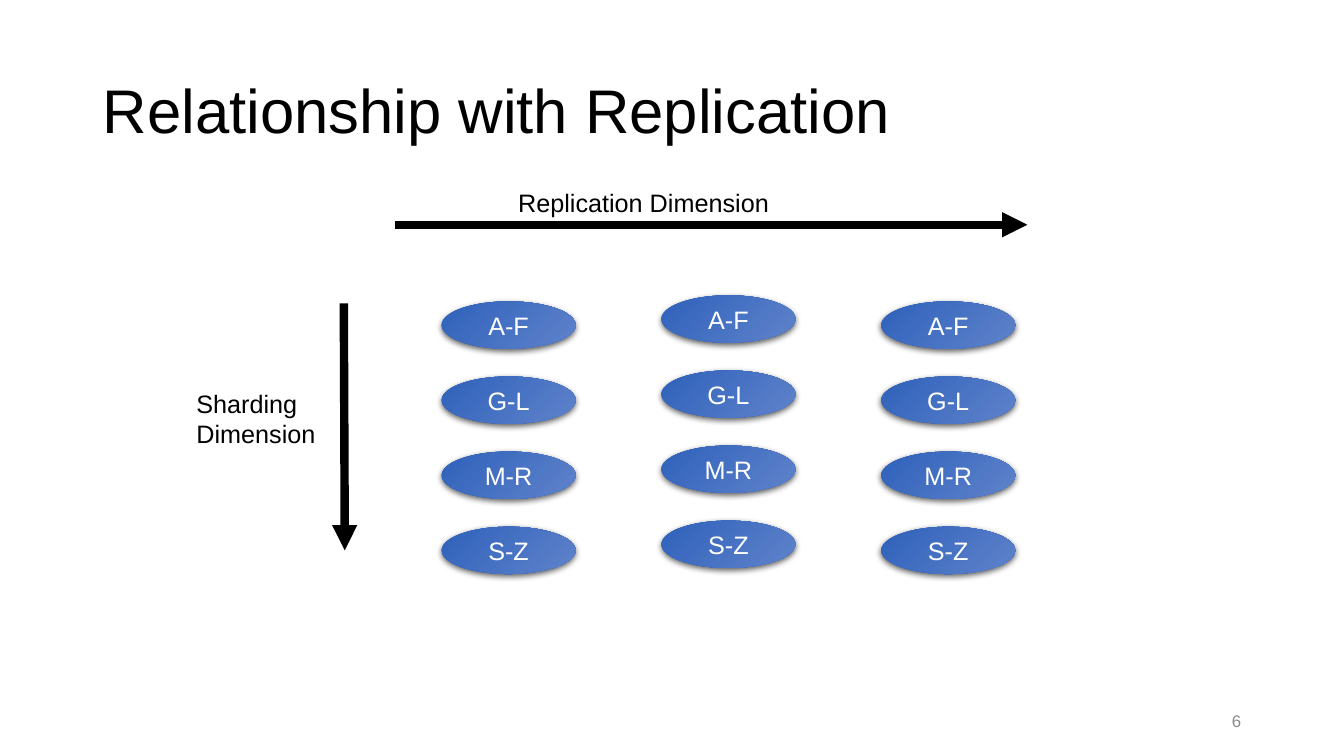
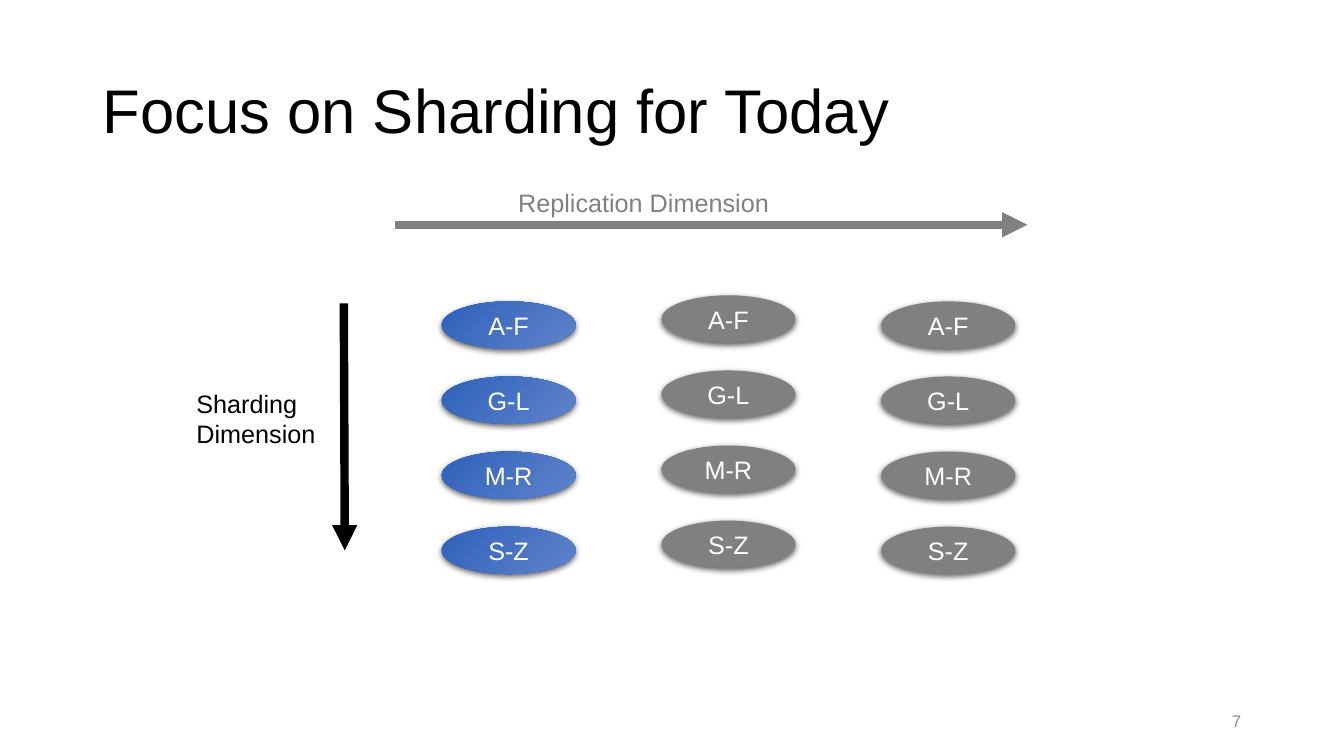
import dataclasses

import lxml.etree
import pptx
import pptx.dml.color
import pptx.enum.shapes
import pptx.enum.text
import pptx.oxml.ns
import pptx.util

SLIDE_WIDTH, SLIDE_HEIGHT = 13.33, 7.5
FONT = "Arial"
COLORS = {
    "ink": "000000",
    "paper": "FFFFFF",
    "muted": "808080",
    "page": "8C8C8C",
    "blue_dark": "2E61BA",
    "blue_light": "6083CB",
}

KEY_RANGES = ("A-F", "G-L", "M-R", "S-Z")
REPLICA_COUNT = 3
GRID_LEFT, GRID_TOP = 4.38, 2.99
COLUMN_STEP, ROW_STEP = 2.18, 0.745
SHARD_WIDTH, SHARD_HEIGHT = 1.33, 0.47
MIDDLE_LIFT = 0.06

ALIGN = pptx.enum.text.PP_ALIGN
ANCHOR = pptx.enum.text.MSO_ANCHOR


@dataclasses.dataclass(frozen=True)
class Box:
    left: float
    top: float
    width: float
    height: float

    def emu(self) -> tuple:
        return tuple(map(pptx.util.Inches, dataclasses.astuple(self)))


@dataclasses.dataclass(frozen=True)
class TextStyle:
    size: int
    align: ALIGN = ALIGN.LEFT
    anchor: ANCHOR = ANCHOR.TOP
    wrap: bool = True
    line_spacing: float = 1.0


@dataclasses.dataclass(frozen=True)
class ShardingSlide:
    title: str
    page: int
    replication_muted: bool


TITLE = TextStyle(44, anchor=ANCHOR.MIDDLE, line_spacing=0.9)
LABEL = TextStyle(18, wrap=False)
SHARD = TextStyle(18, ALIGN.CENTER, ANCHOR.MIDDLE)
PAGE = TextStyle(12, ALIGN.RIGHT, ANCHOR.MIDDLE)

SLIDES = (
    ShardingSlide("Relationship with Replication", 6, replication_muted=False),
    ShardingSlide("Focus on Sharding for Today", 7, replication_muted=True),
)


def rgb(color: str) -> pptx.dml.color.RGBColor:
    return pptx.dml.color.RGBColor.from_string(COLORS[color])


def write(shape, text: str, style: TextStyle, color: str) -> None:
    frame = shape.text_frame
    frame.word_wrap = style.wrap
    frame.vertical_anchor = style.anchor
    paragraph = frame.paragraphs[0]
    paragraph.text = text
    paragraph.alignment = style.align
    paragraph.line_spacing = style.line_spacing
    paragraph.font.name = FONT
    paragraph.font.size = pptx.util.Pt(style.size)
    paragraph.font.color.rgb = rgb(color)


def add_text(slide, box: Box, text: str, style: TextStyle, color: str = "ink") -> None:
    write(slide.shapes.add_textbox(*box.emu()), text, style, color)


def add_xml(parent, tag: str, **attributes: str):
    return lxml.etree.SubElement(parent, pptx.oxml.ns.qn(tag), attributes)


def add_arrow(slide, start: tuple[float, float], end: tuple[float, float], color: str) -> None:
    arrow = slide.shapes.add_connector(
        pptx.enum.shapes.MSO_CONNECTOR.STRAIGHT, *map(pptx.util.Inches, start + end))
    arrow.line.width = pptx.util.Pt(6)
    arrow.line.color.rgb = rgb(color)
    add_xml(arrow.line._get_or_add_ln(), "a:tailEnd", type="triangle")
    add_xml(arrow._element.spPr, "a:effectLst")


def add_soft_shadow(shape) -> None:
    shape.shadow.inherit = False
    effects = shape._element.spPr.find(pptx.oxml.ns.qn("a:effectLst"))
    shadow = add_xml(effects, "a:outerShdw", blurRad=str(pptx.util.Pt(4.5)),
                     dist=str(pptx.util.Pt(1.5)), dir="5400000",
                     algn="ctr", rotWithShape="0")
    shadow_color = add_xml(shadow, "a:srgbClr", val=COLORS["ink"])
    add_xml(shadow_color, "a:alpha", val="63000")


def add_shard(slide, box: Box, key_range: str, muted: bool) -> None:
    shard = slide.shapes.add_shape(pptx.enum.shapes.MSO_SHAPE.OVAL, *box.emu())
    shard.line.fill.background()
    if muted:
        shard.fill.solid()
        shard.fill.fore_color.rgb = rgb("muted")
    else:
        shard.fill.gradient()
        shard.fill.gradient_angle = 315
        for stop, color in zip(shard.fill.gradient_stops, ("blue_dark", "blue_light")):
            stop.color.rgb = rgb(color)
    add_soft_shadow(shard)
    write(shard, key_range, SHARD, "paper")


def add_shard_grid(slide, replicas_muted: bool) -> None:
    """Draw one column per replica and one row per key range; the middle column sits higher."""
    for column in range(REPLICA_COUNT):
        top = GRID_TOP - (MIDDLE_LIFT if column == REPLICA_COUNT // 2 else 0)
        for row, key_range in enumerate(KEY_RANGES):
            box = Box(GRID_LEFT + column * COLUMN_STEP, top + row * ROW_STEP,
                      SHARD_WIDTH, SHARD_HEIGHT)
            add_shard(slide, box, key_range, muted=replicas_muted and column > 0)


def add_sharding_slide(deck, content: ShardingSlide) -> None:
    slide = deck.slides.add_slide(deck.slide_layouts[6])
    replication_color = "muted" if content.replication_muted else "ink"
    add_text(slide, Box(0.92, 0.4, 11.5, 1.45), content.title, TITLE)
    add_shard_grid(slide, content.replication_muted)
    add_arrow(slide, (3.92, 2.23), (10.19, 2.23), replication_color)
    add_text(slide, Box(5.04, 1.81, 2.82, 0.4), "Replication Dimension", LABEL,
             replication_color)
    add_arrow(slide, (3.41, 3.01), (3.42, 5.46), "ink")
    add_text(slide, Box(1.85, 3.8, 1.44, 0.71), "Sharding\nDimension", LABEL)
    add_text(slide, Box(9.41, 6.95, 3, 0.4), str(content.page), PAGE, "page")


def main() -> None:
    deck = pptx.Presentation()
    deck.slide_width = pptx.util.Inches(SLIDE_WIDTH)
    deck.slide_height = pptx.util.Inches(SLIDE_HEIGHT)
    for content in SLIDES:
        add_sharding_slide(deck, content)
    deck.save("out.pptx")


if __name__ == "__main__":
    main()
